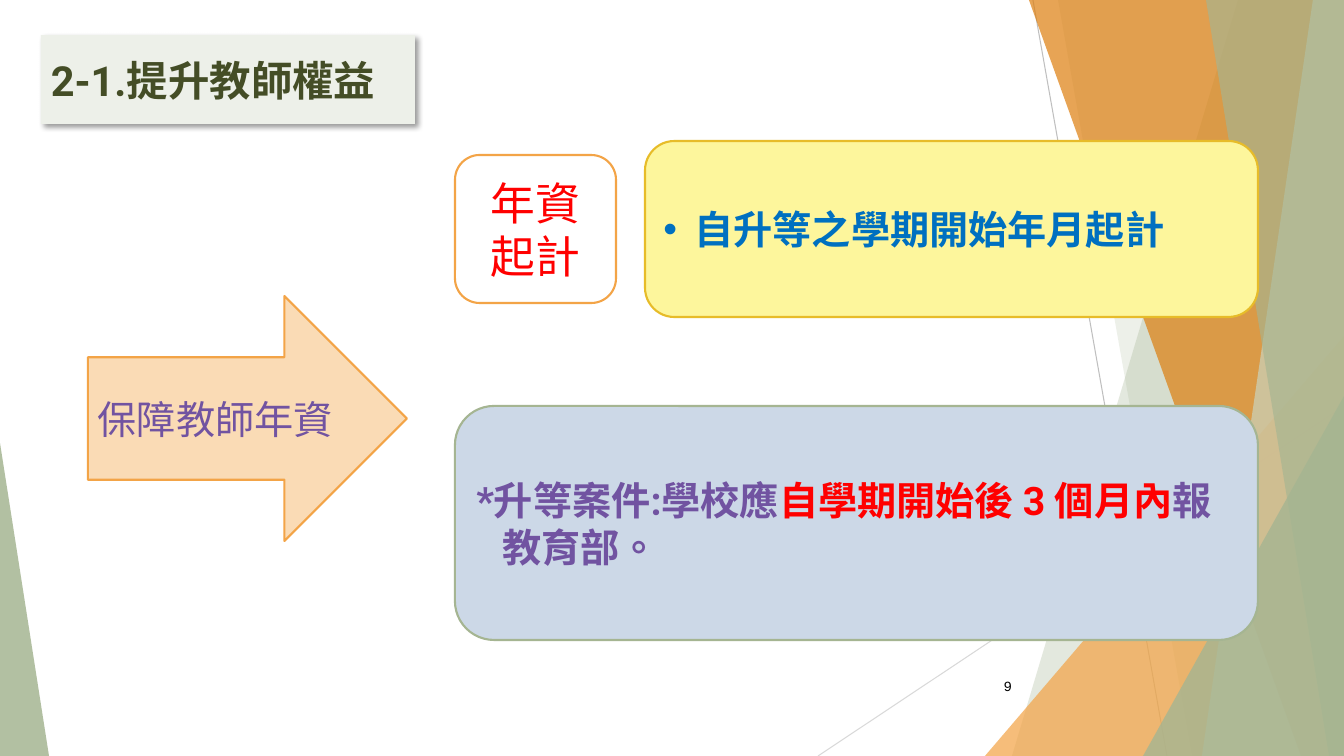
import pptx
import pptx.util
import pptx.dml.color
import pptx.enum.shapes
import pptx.enum.text
import pptx.oxml
import pptx.oxml.ns

THEME = {
    "green": "A5B592", "pale_green": "C9D3BE", "orange": "F3A447", "dark_orange": "DD7E0E",
    "title_fill": "EDF0E9", "title_text": "444D26", "yellow": "FDF69C", "gold": "E7BC29",
    "white": "FFFFFF", "blue_fill": "CCD8E7", "peach": "FADBB5", "black": "000000",
    "red": "FF0000", "blue": "0070C0", "purple": "7153A1", "line": "BFBFBF", "pale_line": "D9D9D9",
    "latin": "Roboto", "asian": "Noto Sans CJK JP", "number": "Courier New",
    "title_size": 29.6, "label_size": 32, "body_size": 28, "number_size": 10,
    "outline": 1.5, "hairline": 0.75,
}
SCALE = 914400 / 100.8
WIDTH, HEIGHT = 1344, 756
SHAPES = pptx.enum.shapes.MSO_SHAPE
ALIGN = pptx.enum.text.PP_ALIGN
NAMESPACE = pptx.oxml.ns.nsdecls("a")


def px(*lengths):
    return [pptx.util.Emu(round(length * SCALE)) for length in lengths]


def color(name):
    return pptx.dml.color.RGBColor.from_string(THEME[name])


presentation = pptx.Presentation()
presentation.slide_width, presentation.slide_height = px(WIDTH, HEIGHT)
slide = presentation.slides.add_slide(presentation.slide_layouts[6])

# Thin background lines
for start_x, start_y, end_x, end_y, line_color in [
    (1033, 0, 1167, HEIGHT, "line"),
    (WIDTH, 406, 818, HEIGHT, "pale_line"),
]:
    connector = slide.shapes.add_connector(
        pptx.enum.shapes.MSO_CONNECTOR.STRAIGHT, *px(start_x, start_y, end_x, end_y))
    connector.line.color.rgb = color(line_color)
    connector.line.width = pptx.util.Pt(THEME["hairline"])
    connector._element.spPr.append(pptx.oxml.parse_xml(f"<a:effectLst {NAMESPACE}/>"))

# Facets: a band has its top and bottom x and runs to the right edge,
# a triangle has left, top, width and the place of its apex
for kind, values, fill_color, opacity in [
    ("band", (1238, 1012), "green", 30),
    ("band", (1058, 1192), "green", 20),
    ("triangle", (985, 336, 359, 1), "orange", 72),
    ("band", (1029, 1301), "dark_orange", 70),
    ("band", (1313, 1202), "pale_green", 70),
    ("band", (1206, 1329), "green", 65),
    ("triangle", (1143, 396, 201, 1), "green", 80),
    ("triangle", (0, 443, 49, 0), "green", 85),
]:
    if kind == "band":
        top_x, bottom_x = values
        builder = slide.shapes.build_freeform(top_x, 0, scale=SCALE)
        builder.add_line_segments([(WIDTH, 0), (WIDTH, HEIGHT), (bottom_x, HEIGHT)])
        facet = builder.convert_to_shape()
    else:
        left, top, width, apex = values
        facet = slide.shapes.add_shape(
            SHAPES.ISOSCELES_TRIANGLE, *px(left, top, width, HEIGHT - top))
        facet.adjustments[0] = apex
    facet.shadow.inherit = False
    facet.line.fill.background()
    facet.fill.solid()
    facet.fill.fore_color.rgb = color(fill_color)
    facet._element.spPr.find(".//" + pptx.oxml.ns.qn("a:srgbClr")).append(
        pptx.oxml.parse_xml(f'<a:alpha {NAMESPACE} val="{opacity * 1000}"/>'))

# Content: name, preset, box, fill, outline, alignment, size, font, bold, hanging indent, runs
content = {}
for name, preset, box, fill_color, line_color, alignment, size, font, bold, indent, runs in [
    ("page number", None, (946, 666, 76, 40), None, None, ALIGN.RIGHT,
     "number_size", "number", False, 0, [("9", "black")]),
    ("title", SHAPES.RECTANGLE, (41, 35, 374, 89), "title_fill", None, ALIGN.LEFT,
     "title_size", "latin", True, 0, [("2-1.提升教師權益", "title_text")]),
    ("start date", SHAPES.ROUNDED_RECTANGLE, (645, 141, 613, 176), "yellow", "gold", ALIGN.LEFT,
     "body_size", "latin", True, 31, [("自升等之學期開始年月起計", "blue")]),
    ("start label", SHAPES.ROUNDED_RECTANGLE, (455, 155, 161, 148), "white", "orange", ALIGN.CENTER,
     "label_size", "latin", False, 0, [("年資起計", "red")]),
    ("deadline", SHAPES.ROUNDED_RECTANGLE, (455, 406, 803, 234), "blue_fill", "green", ALIGN.LEFT,
     "body_size", "latin", True, 26,
     [("*升等案件:學校應", "purple"), ("自學期開始後 3 個月內", "red"), ("報教育部。", "purple")]),
    ("arrow", SHAPES.RIGHT_ARROW, (88, 296, 319, 245), "peach", "orange", ALIGN.LEFT,
     "body_size", "asian", False, 0, [("保障教師年資", "purple")]),
]:
    if preset is None:
        shape = slide.shapes.add_textbox(*px(*box))
    else:
        shape = slide.shapes.add_shape(preset, *px(*box))
        shape.shadow.inherit = False
        shape.fill.solid()
        shape.fill.fore_color.rgb = color(fill_color)
        if line_color:
            shape.line.color.rgb = color(line_color)
            shape.line.width = pptx.util.Pt(THEME["outline"])
        else:
            shape.line.fill.background()
    content[name] = shape

    text_frame = shape.text_frame
    text_frame.word_wrap = True
    text_frame.vertical_anchor = pptx.enum.text.MSO_ANCHOR.MIDDLE
    paragraph = text_frame.paragraphs[0]
    paragraph.alignment = alignment
    if indent:
        properties = paragraph._p.get_or_add_pPr()
        properties.set("marL", str(px(indent)[0]))
        properties.set("indent", str(-px(indent)[0]))
    for text, text_color in runs:
        run = paragraph.add_run()
        run.text = text
        run.font.size = pptx.util.Pt(THEME[size])
        run.font.bold = bold
        run.font.color.rgb = color(text_color)
        run.font.name = THEME[font]
        run.font._element.set("lang", "zh-TW")
        run.font._element.find(pptx.oxml.ns.qn("a:latin")).addnext(
            pptx.oxml.parse_xml(f'<a:ea {NAMESPACE} typeface="{THEME["asian"]}"/>'))

# Bullet of the start date
bullet_properties = content["start date"].text_frame.paragraphs[0]._p.get_or_add_pPr()
bullet_properties.append(pptx.oxml.parse_xml(f'<a:buFont {NAMESPACE} typeface="Arial"/>'))
bullet_properties.append(pptx.oxml.parse_xml(f'<a:buChar {NAMESPACE} char="•"/>'))

# Shadow of the title
effects = content["title"]._element.spPr.find(pptx.oxml.ns.qn("a:effectLst"))
effects.append(pptx.oxml.parse_xml(
    f'<a:outerShdw {NAMESPACE} blurRad="{pptx.util.Pt(4)}" dist="{pptx.util.Pt(3)}" '
    f'dir="{45 * 60000}" algn="tl" rotWithShape="0">'
    f'<a:srgbClr val="{THEME["black"]}"><a:alpha val="40000"/></a:srgbClr></a:outerShdw>'))

presentation.save("out.pptx")
